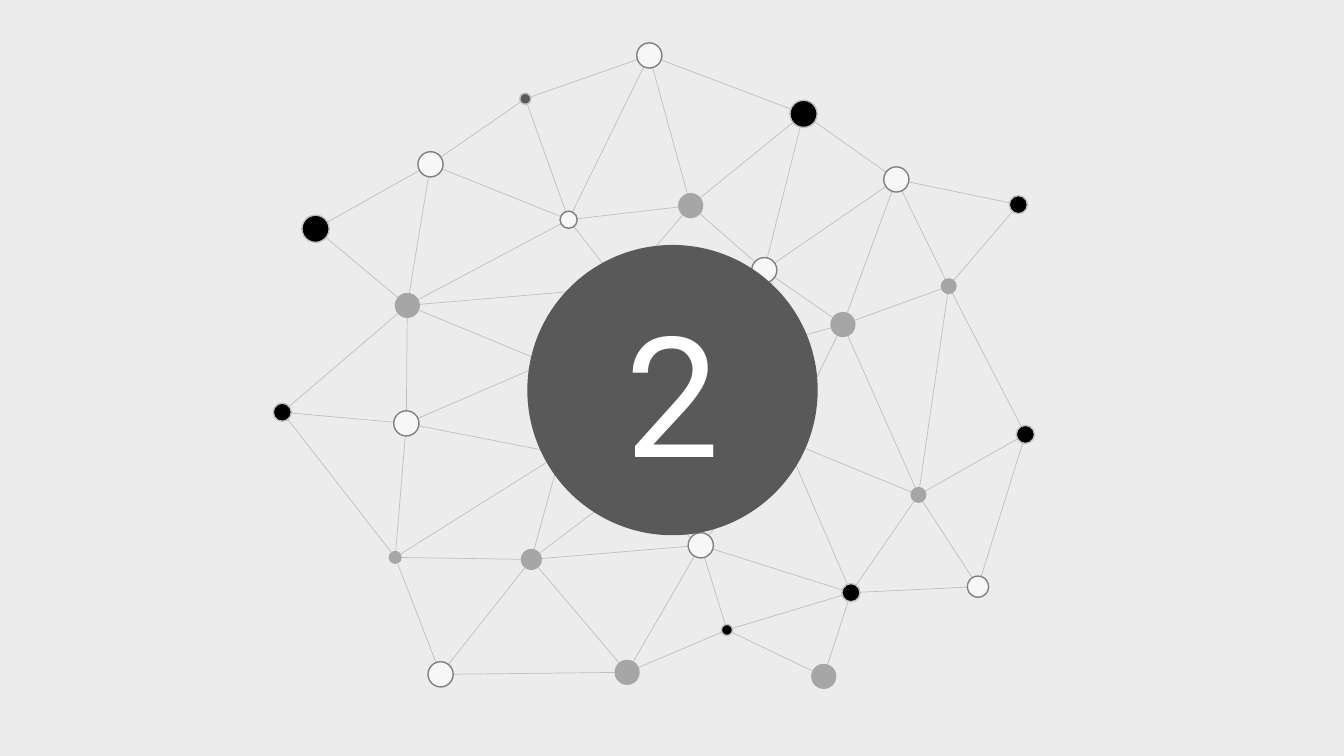
from math import hypot

from lxml.etree import SubElement
from pptx import Presentation
from pptx.dml.color import RGBColor
from pptx.enum.shapes import MSO_CONNECTOR, MSO_SHAPE
from pptx.enum.text import MSO_ANCHOR, PP_ALIGN
from pptx.oxml.ns import qn
from pptx.util import Inches, Pt

COLORS = {
    "background": "ECECEC",
    "black": "000000",
    "dark": "595959",
    "gray": "A6A6A6",
    "light": "F7F7F7",
    "link": "BFBFBF",
    "ring": "808080",
    "white": "FFFFFF",
}

OUTLINES = {"black": "link", "dark": "link", "light": "ring", "gray": None}

NODES = [
    ("black", 0.27, {"k": (3.13, 2.27), "m": (7.97, 1.13)}),
    ("black", 0.18, {"a": (2.8, 4.09), "j": (10.17, 4.31),
                     "w": (10.1, 2.03), "y": (8.44, 5.88)}),
    ("black", 0.11, {"z": (7.21, 6.25)}),
    ("dark", 0.11, {"q": (5.21, 0.98)}),
    ("light", 0.25, {"b": (4.03, 4.2), "e": (6.95, 5.41), "f": (6.44, 0.55),
                     "l": (4.27, 1.63), "o": (7.58, 2.68), "p": (8.89, 1.78),
                     "t": (4.37, 6.69)}),
    ("light", 0.21, {"h": (9.7, 5.82)}),
    ("light", 0.17, {"r": (5.64, 2.18)}),
    ("gray", 0.25, {"i": (6.85, 2.04), "n": (8.36, 3.22), "s": (4.04, 3.03),
                    "v": (8.17, 6.71), "x": (6.22, 6.67)}),
    ("gray", 0.21, {"d": (5.27, 5.55)}),
    ("gray", 0.16, {"g": (9.11, 4.91), "u": (9.41, 2.84)}),
    ("gray", 0.13, {"c": (3.92, 5.53)}),
]

HUB_POINTS = {"A": (5.42, 3.6), "B": (5.56, 4.5), "C": (6.22, 4.83),
              "D": (7.79, 4.37), "E": (6.81, 3.65), "F": (6.16, 2.85)}

LINKS = (
    "ac cb bA dB eD gn cd Cd ug jh hg ks lq no rF fr mf mo pm kl fq qr "
    "pw uw pu jg tx td tc Dy Dg gy hy vy Ce de ze zy ey xd bB ab sb sA "
    "ls lr as sr sF mi fi ri Fo Fi oi po un pn nD En xe xz zv Bc uj"
).split()


def rgb(name):
    return RGBColor.from_string(COLORS[name])


def add_link(s, start, end):
    (x1, y1, r1), (x2, y2, r2) = start, end
    length = hypot(x2 - x1, y2 - y1)
    dx, dy = (x2 - x1) / length, (y2 - y1) / length
    line = s.shapes.add_connector(
        MSO_CONNECTOR.STRAIGHT,
        Inches(x1 + r1 * dx), Inches(y1 + r1 * dy),
        Inches(x2 - r2 * dx), Inches(y2 - r2 * dy))
    line.line.color.rgb = rgb("link")
    line.line.width = Pt(0.5)
    SubElement(line._element.spPr, qn("a:effectLst"))


def add_circle(s, x, y, size, fill, outline=None):
    sp = s.shapes.add_shape(
        MSO_SHAPE.OVAL, Inches(x - size / 2), Inches(y - size / 2),
        Inches(size), Inches(size))
    sp.shadow.inherit = False
    sp.fill.solid()
    sp.fill.fore_color.rgb = rgb(fill)
    if outline:
        sp.line.color.rgb = rgb(outline)
        sp.line.width = Pt(1)
    else:
        sp.line.fill.background()
    return sp


def add_number(s, text):
    tf = add_circle(s, 6.67, 3.87, 2.88, "dark").text_frame
    tf.word_wrap = True
    tf.vertical_anchor = MSO_ANCHOR.MIDDLE
    p = tf.paragraphs[0]
    p.text = text
    p.alignment = PP_ALIGN.CENTER
    p.font.name = "Roboto"
    p.font.size = Pt(120)
    p.font.color.rgb = rgb("white")


def main():
    prs = Presentation()
    prs.slide_width, prs.slide_height = Inches(13.33), Inches(7.5)
    s = prs.slides.add_slide(prs.slide_layouts[6])
    s.background.fill.solid()
    s.background.fill.fore_color.rgb = rgb("background")

    ends = {key: (x, y, 0) for key, (x, y) in HUB_POINTS.items()}
    for fill, size, centers in NODES:
        for key, (x, y) in centers.items():
            ends[key] = (x, y, size / 2)
    for start, end in LINKS:
        add_link(s, ends[start], ends[end])
    for fill, size, centers in NODES:
        for x, y in centers.values():
            add_circle(s, x, y, size, fill, OUTLINES[fill])
    add_number(s, "2")
    prs.save("out.pptx")


if __name__ == "__main__":
    main()
